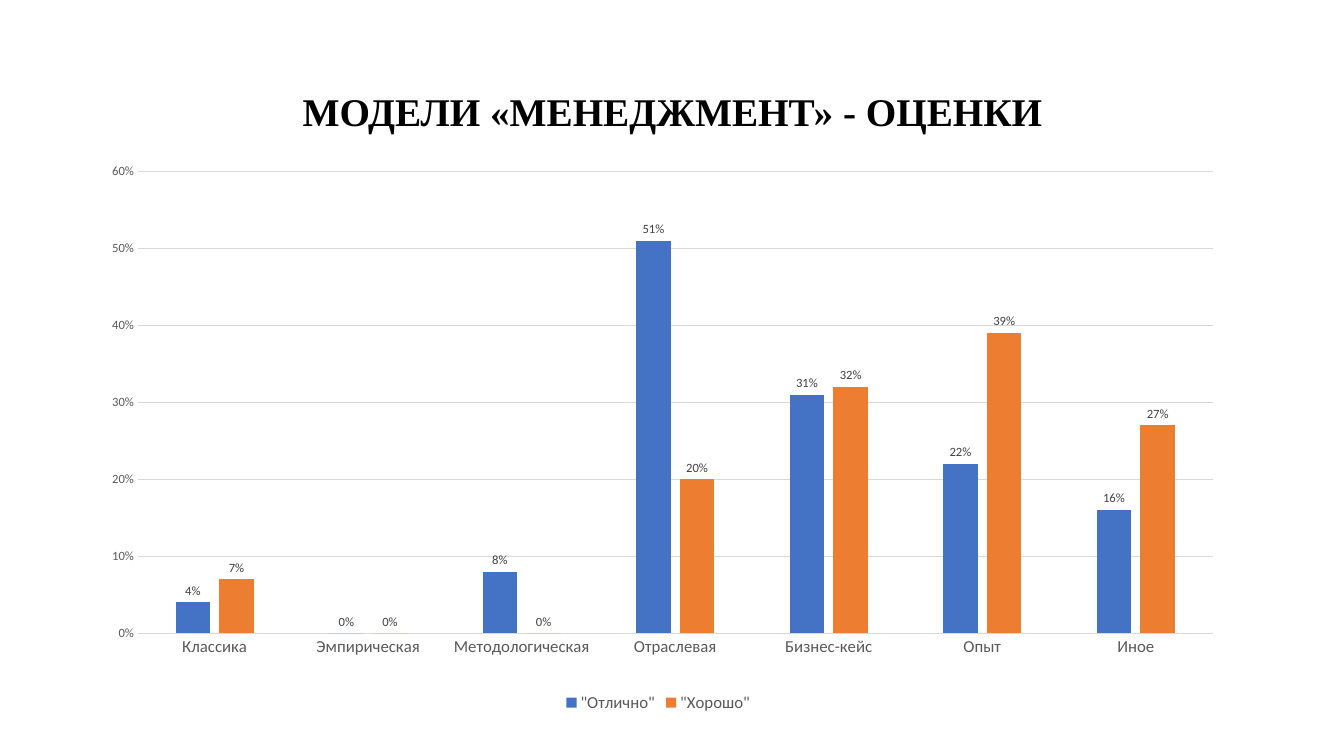
from lxml import etree
from pptx import Presentation
from pptx.chart.data import CategoryChartData
from pptx.dml.color import RGBColor
from pptx.enum.chart import (XL_CHART_TYPE, XL_LABEL_POSITION,
                             XL_LEGEND_POSITION, XL_TICK_MARK)
from pptx.enum.text import MSO_ANCHOR, PP_ALIGN
from pptx.oxml.ns import qn
from pptx.util import Inches, Pt

CATS = ["Классика", "Эмпирическая", "Методологическая", "Отраслевая",
        "Бизнес-кейс", "Опыт", "Иное"]
MARKS = [
    ('"Отлично"', "4472C4", [0.04, 0, 0.08, 0.51, 0.31, 0.22, 0.16]),
    ('"Хорошо"', "ED7D31", [0.07, 0, 0, 0.2, 0.32, 0.39, 0.27]),
]


def color(code):
    return RGBColor.from_string(code)


class Deck:
    head, body = "Times New Roman", "Calibri"
    black, dark, gray, pale = "000000", "404040", "595959", "D9D9D9"

    def __init__(self, wide, high):
        self.prs = Presentation()
        self.prs.slide_width = Inches(wide)
        self.prs.slide_height = Inches(high)
        self.slide = self.prs.slides.add_slide(self.prs.slide_layouts[5])
        back = self.slide.background.fill
        back.solid()
        back.fore_color.rgb = color("FFFFFF")

    def box(self, x, y, w, h):
        """Turn percentages of the slide into lengths."""
        wide, high = self.prs.slide_width, self.prs.slide_height
        return [round(part * full / 100) for part, full in
                ((x, wide), (y, high), (w, wide), (h, high))]

    def style(self, font, size, code, face=None):
        font.size = Pt(size)
        font.name = face or self.body
        font.color.rgb = color(code)

    def rule(self, line):
        line.color.rgb = color(self.pale)
        line.width = Pt(0.75)

    def title(self, text, *place):
        shape = self.slide.shapes.title
        shape.left, shape.top, shape.width, shape.height = self.box(*place)
        frame = shape.text_frame
        frame.text = text
        frame.vertical_anchor = MSO_ANCHOR.MIDDLE
        para = frame.paragraphs[0]
        para.alignment = PP_ALIGN.CENTER
        para.line_spacing = 0.9
        self.style(para.font, 28, self.black, self.head)
        para.font.bold = True

    def chart(self, cats, rows, *place):
        data = CategoryChartData(number_format="0%")
        data.categories = cats
        for name, _, vals in rows:
            data.add_series(name, vals)
        chart = self.slide.shapes.add_chart(
            XL_CHART_TYPE.COLUMN_CLUSTERED, *self.box(*place), data).chart
        self.style(chart.font, 10, self.black)
        chart.has_title = False
        self.axes(chart)

        # Columns and their labels
        plot = chart.plots[0]
        plot.gap_width, plot.overlap = 219, -27
        plot.vary_by_categories = False
        for bars, (_, code, _) in zip(plot.series, rows):
            bars.format.fill.solid()
            bars.format.fill.fore_color.rgb = color(code)
            bars.invert_if_negative = False
            tags = bars.data_labels
            tags.show_value = True
            tags.position = XL_LABEL_POSITION.OUTSIDE_END
            tags.number_format = "0%"
            tags.number_format_is_linked = False
            self.style(tags.font, 9, self.dark)

        # Legend
        chart.has_legend = True
        chart.legend.position = XL_LEGEND_POSITION.BOTTOM
        chart.legend.include_in_layout = False
        self.style(chart.legend.font, 12, self.gray)
        return chart

    def axes(self, chart):
        base, scale = chart.category_axis, chart.value_axis
        for axis, size in ((base, 12), (scale, 9)):
            axis.major_tick_mark = axis.minor_tick_mark = XL_TICK_MARK.NONE
            self.style(axis.tick_labels.font, size, self.gray)
        self.rule(base.format.line)
        scale.format.line.fill.background()
        scale.has_major_gridlines = True
        self.rule(scale.major_gridlines.format.line)
        scale.minimum_scale, scale.maximum_scale = 0, 0.6
        scale.major_unit = 0.1
        scale.tick_labels.number_format = "0%"
        scale.tick_labels.number_format_is_linked = False

    def inset(self, chart, x, y, w, h):
        """Fix the inner plot area, in shares of the chart."""
        area = next(chart.element.iter(qn("c:plotArea")))
        for old in area.findall(qn("c:layout")):
            area.remove(old)
        layout = etree.Element(qn("c:layout"))
        area.insert(0, layout)
        manual = etree.SubElement(layout, qn("c:manualLayout"))
        for tag, val in (("layoutTarget", "inner"), ("xMode", "edge"),
                         ("yMode", "edge"), ("x", x), ("y", y),
                         ("w", w), ("h", h)):
            etree.SubElement(manual, qn("c:" + tag)).set("val", str(val))


def main():
    deck = Deck(13.33, 7.5)
    # Heading
    deck.title("МОДЕЛИ «МЕНЕДЖМЕНТ» - ОЦЕНКИ", 6.9, 5.33, 86.27, 19.33)
    # Ratings by model
    chart = deck.chart(CATS, MARKS, 6.9, 21.2, 84.17, 73.6)
    deck.inset(chart, 0.04, 0.02, 0.95, 0.83)
    deck.prs.save("out.pptx")


if __name__ == "__main__":
    main()
